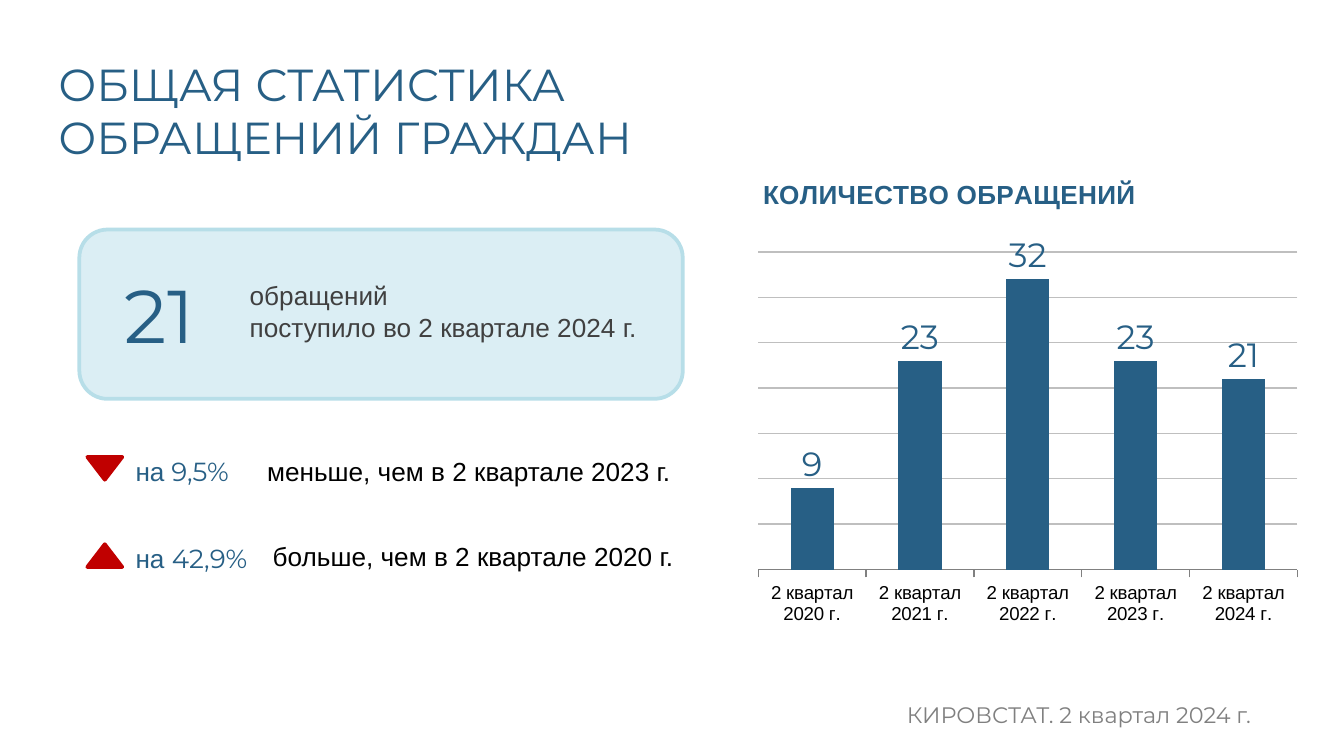
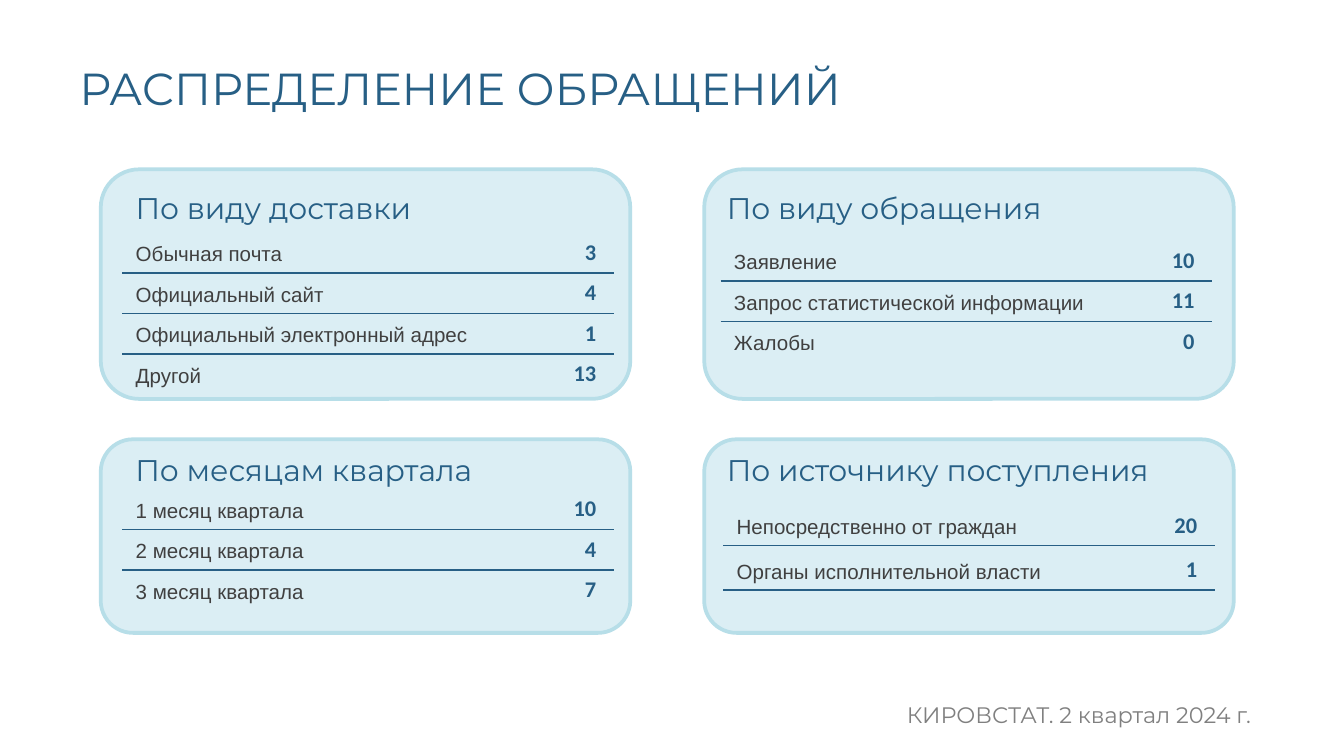
from itertools import cycle

from lxml import etree
from pptx import Presentation, util as u
from pptx.chart.data import CategoryChartData
from pptx.dml.color import RGBColor
from pptx.enum import chart as ch, shapes, text as tx
from pptx.oxml import parse_xml
from pptx.oxml.ns import nsdecls, qn

HUES = {"blue": "275F85", "pale": "DBEEF4", "edge": "B7DEE8", "red": "C00000",
        "dark": "404040", "gray": "808080", "grid": "BFBFBF", "black": "000000"}
HUES = {name: RGBColor.from_string(code) for name, code in HUES.items()}
SANS, HEAD = "Arial", "Montserrat"
FOOT = "КИРОВСТАТ. 2 квартал 2024 г."


def say(frame, words, size=14, face=SANS, hue="blue", bold=False, wrap=None,
        align=tx.PP_ALIGN.LEFT):
    """Write lines split by a newline; "|" starts a run in the next face."""
    faces = [face] if isinstance(face, str) else face
    if wrap is not None:
        frame.word_wrap = wrap
    for i, line in enumerate(words.split("\n")):
        par = frame.add_paragraph() if i else frame.paragraphs[0]
        par.alignment = align
        for part, name in zip(line.split("|"), cycle(faces)):
            run = par.add_run()
            run.text = part
            font = run.font
            font.size, font.name, font.bold = u.Pt(size), name, bold
            font.color.rgb = HUES[hue]


def spot(node, at, **marks):
    """Give a chart part a manual layout as its child number at."""
    old = node.find(qn("c:layout"))
    if old is not None:
        node.remove(old)
    lay = etree.Element(qn("c:layout"))
    man = etree.SubElement(lay, qn("c:manualLayout"))
    for key, val in marks.items():
        etree.SubElement(man, qn("c:" + key)).set("val", str(val))
    node.insert(at, lay)


deck = Presentation()
deck.slide_width, deck.slide_height = u.Pt(720), u.Pt(405)

# Shared on both slides: title and footer
pages = []
for head, box, inset in [
        ("ОБЩАЯ СТАТИСТИКА\nОБРАЩЕНИЙ ГРАЖДАН", (24, 26.6, 342, 65.5), (7.2, 3.6)),
        ("РАСПРЕДЕЛЕНИЕ ОБРАЩЕНИЙ", (42.5, 32.4, 648, 45.4), (0, 0))]:
    page = deck.slides.add_slide(deck.slide_layouts[5])
    title = page.shapes.title
    title.left, title.top, title.width, title.height = map(u.Pt, box)
    frame = title.text_frame
    frame.margin_left = frame.margin_right = u.Pt(inset[0])
    frame.margin_top = frame.margin_bottom = u.Pt(inset[1])
    frame.vertical_anchor = tx.MSO_ANCHOR.TOP
    frame.auto_size = tx.MSO_AUTO_SIZE.NONE
    say(frame, head, size=24, face=HEAD, wrap=True)
    foot = page.shapes.add_textbox(*map(u.Pt, (478.8, 372.2, 223, 21.8)))
    say(foot.text_frame, FOOT, size=12, face=HEAD, hue="gray", wrap=False)
    pages.append(page)
stats, split = pages

# Panels and trend markers
KIND = shapes.MSO_SHAPE
for page, kind, box, fill, line, turn in [
        (stats, KIND.ROUNDED_RECTANGLE, (42.5, 123, 323.3, 90.7), "pale", "edge", 0),
        (stats, KIND.ISOSCELES_TRIANGLE, (46.8, 244.8, 18.7, 12.2), "red", "red", 180),
        (stats, KIND.ISOSCELES_TRIANGLE, (46.8, 291.6, 18.7, 12.2), "red", "red", 0),
        *[(split, KIND.ROUNDED_RECTANGLE, (x, y, 283.7, h), "pale", "edge", 0)
          for y, h in [(90.7, 123), (235.4, 103.7)] for x in (54, 377.3)]]:
    shape = page.shapes.add_shape(kind, *map(u.Pt, box))
    shape.shadow.inherit = False
    shape.fill.solid()
    shape.fill.fore_color.rgb = HUES[fill]
    shape.line.color.rgb = HUES[line]
    shape.line.width = u.Pt(2)
    shape.rotation = turn

# Key figures
for words, box, form in [
        ("21", (59.8, 140.4, 68.4, 55.4), dict(size=40, face=HEAD)),
        ("обращений\nпоступило во 2 квартале 2024 г.", (126.7, 146.2, 223.2, 58.3),
         dict(hue="dark")),
        ("на| 9,5%", (65.5, 240.5, 72.7, 24.5), dict(face=(SANS, HEAD))),
        ("меньше, чем в 2 квартале 2023 г.", (136, 240.5, 260, 24.5),
         dict(hue="black", wrap=True)),
        ("на |42,9%", (65.5, 287.3, 82, 24.5), dict(face=(SANS, HEAD))),
        ("больше, чем в 2 квартале 2020 г.", (139, 285.8, 236, 24.5),
         dict(hue="black", wrap=True))]:
    note = stats.shapes.add_textbox(*map(u.Pt, box))
    say(note.text_frame, words, **{"wrap": False, **form})

# Column chart
data = CategoryChartData()
data.categories = [f"2 квартал {year} г." for year in range(2020, 2025)]
data.add_series("Series 1", (9, 23, 32, 23, 21))
chart = stats.shapes.add_chart(ch.XL_CHART_TYPE.COLUMN_STACKED,
                               *map(u.Pt, (386, 77, 404, 263.5)), data).chart
chart.has_legend = False
chart.font.size, chart.font.name = u.Pt(18), "Calibri"
chart.font.color.rgb = HUES["black"]
chart.has_title = True
say(chart.chart_title.text_frame, "КОЛИЧЕСТВО ОБРАЩЕНИЙ", bold=True)
spot(chart.chart_title._element, 1, xMode="edge", yMode="edge", x=0.05, y=0.06)

plot = chart.plots[0]
plot.gap_width, plot.overlap, plot.vary_by_categories = 150, 100, False
spot(plot._element.getparent(), 0, layoutTarget="inner", xMode="edge",
     yMode="edge", x=0.05, y=0.22, w=0.715, h=0.646)
bars = plot.series[0]
bars.format.fill.solid()
bars.format.fill.fore_color.rgb = HUES["blue"]
for i in range(5):
    label = bars.points[i].data_label
    label.font.size, label.font.name = u.Pt(18), HEAD
    label.font.color.rgb = HUES["blue"]
    label.position = ch.XL_LABEL_POSITION.INSIDE_END
for node in bars._element.iter(qn("c:dLbl")):
    spot(node, 1, x=0, y=-0.1)

cats, vals = chart.category_axis, chart.value_axis
cats.tick_labels.font.size, cats.tick_labels.font.name = u.Pt(10), SANS
cats.major_tick_mark = ch.XL_TICK_MARK.OUTSIDE
cats.format.line.color.rgb = HUES["gray"]
vals.visible = False
vals.minimum_scale, vals.maximum_scale, vals.major_unit = 0, 35, 5
vals.major_gridlines.format.line.color.rgb = HUES["grid"]
vals.major_gridlines.format.line.width = u.Pt(0.75)

# Panel headings
for words, x, y, w in [("По виду доставки", 65.5, 98, 187),
                       ("По виду обращения", 382.3, 98, 249),
                       ("По месяцам квартала", 65.5, 238.3, 255),
                       ("По источнику поступления", 382.3, 238.3, 335)]:
    note = split.shapes.add_textbox(*map(u.Pt, (x, y, w, 26.6)))
    say(note.text_frame, words, size=16, face=HEAD, wrap=True)

# Tables: a rule under each row but the last, and under a single row
PLAIN = "{2D5ABB26-0587-4C30-8999-92F81FD0307C}"
RULE = (f'<a:lnB {nsdecls("a")} w="12700"><a:solidFill>'
        f'<a:srgbClr val="{HUES["blue"]}"/></a:solidFill></a:lnB>')
for x, y, rows in [
        (65.5, 124.6, [("Обычная почта", 3), ("Официальный сайт", 4),
                       ("Официальный электронный адрес", 1), ("Другой", 13)]),
        (386, 128.9, [("Заявление", 10), ("Запрос статистической информации", 11),
                      ("Жалобы", 0)]),
        (65.5, 262, [("1 месяц квартала", 10), ("2 месяц квартала", 4),
                     ("3 месяц квартала", 7)]),
        (387.4, 270.7, [("Непосредственно от граждан", 20)]),
        (387.4, 294.5, [("Органы исполнительной власти", 1)])]:
    size = len(rows)
    grid = split.shapes.add_table(
        size, 2, *map(u.Pt, (x, y, 263.5, 21.6 * size))).table
    grid.first_row = grid.horz_banding = False
    grid._tbl.tblPr.find(qn("a:tableStyleId")).text = PLAIN
    for col, wide in zip(grid.columns, (235.4, 28.1)):
        col.width = u.Pt(wide)
    for i, (name, count) in enumerate(rows):
        left, right = grid.cell(i, 0), grid.cell(i, 1)
        say(left.text_frame, name, size=11, hue="dark")
        say(right.text_frame, str(count), size=12, face="Calibri", bold=True,
            align=tx.PP_ALIGN.RIGHT)
        right.margin_left, right.margin_right = u.Pt(4), u.Pt(9.6)
        for cell in (left, right):
            cell.vertical_anchor = tx.MSO_ANCHOR.BOTTOM
            cell.fill.background()
            if size == 1 or i < size - 1:
                cell._tc.get_or_add_tcPr().insert(0, parse_xml(RULE))

deck.save("out.pptx")
